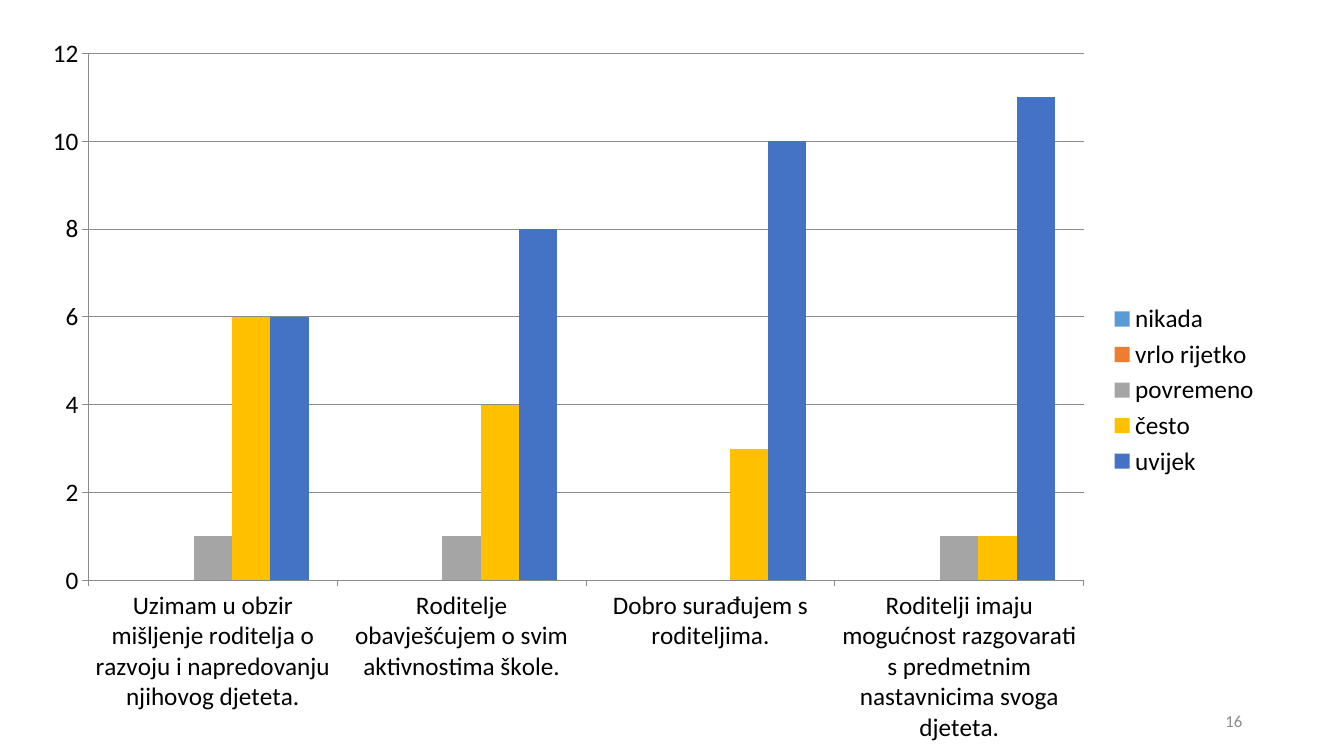
"""Build a slide with a column chart of teachers' answers about working with parents."""
from lxml import etree
from pptx import Presentation
from pptx.chart.data import CategoryChartData
from pptx.dml.color import RGBColor
from pptx.enum.chart import XL_CHART_TYPE as ChartType, XL_LEGEND_POSITION as LegendPosition
from pptx.enum.chart import XL_TICK_MARK as TickMark
from pptx.enum.text import MSO_ANCHOR as Anchor, PP_ALIGN as Align
from pptx.oxml.ns import qn
from pptx.util import Inches, Pt


def paint(color_format, hex_color):
    color_format.rgb = RGBColor.from_string(hex_color)


statements = [
    "Uzimam u obzir mišljenje roditelja o razvoju i napredovanju njihovog djeteta.",
    "Roditelje obavješćujem o svim aktivnostima škole.",
    "Dobro surađujem s roditeljima.",
    "Roditelji imaju mogućnost razgovarati s predmetnim nastavnicima svoga djeteta.",
]
answers = [
    ("nikada", (None, None, None, None), "5B9BD5"),
    ("vrlo rijetko", (None, None, None, None), "ED7D31"),
    ("povremeno", (1, 1, None, 1), "A5A5A5"),
    ("često", (6, 4, 3, 1), "FFC000"),
    ("uvijek", (6, 8, 10, 11), "4472C4"),
]

deck = Presentation()
deck.slide_width, deck.slide_height = Inches(13.33), Inches(7.5)
slide = deck.slides.add_slide(deck.slide_layouts[6])

survey = CategoryChartData()
survey.categories = statements
for answer, counts, _ in answers:
    survey.add_series(answer, counts)

chart = slide.shapes.add_chart(
    ChartType.COLUMN_CLUSTERED, Inches(0.26), Inches(0.24), Inches(12.34), Inches(7.26), survey
).chart
chart.has_title = False
chart.font.name = "Calibri"
chart.font.size = Pt(18)
paint(chart.font.color, "000000")
chart.has_legend = True
chart.legend.position = LegendPosition.RIGHT
chart.legend.include_in_layout = False

columns = chart.plots[0]
columns.gap_width = 150
columns.overlap = 0
columns.vary_by_categories = False
for series, (_, _, color) in zip(columns.series, answers):
    series.format.fill.solid()
    paint(series.format.fill.fore_color, color)

counts_axis = chart.value_axis
counts_axis.minimum_scale, counts_axis.maximum_scale, counts_axis.major_unit = 0, 12, 2
counts_axis.has_major_gridlines = True
for axis in (chart.category_axis, counts_axis):
    axis.major_tick_mark = TickMark.OUTSIDE
    axis.minor_tick_mark = TickMark.NONE
for ruled in (chart.category_axis, counts_axis, counts_axis.major_gridlines):
    ruled.format.line.width = Pt(0.75)
    paint(ruled.format.line.color, "8B8B8B")

plot_area = columns._element.getparent()
for old_layout in plot_area.findall(qn("c:layout")):
    plot_area.remove(old_layout)
layout = etree.Element(qn("c:layout"))
plot_area.insert(0, layout)
manual = etree.SubElement(layout, qn("c:manualLayout"))
for tag, value in [("layoutTarget", "inner"), ("xMode", "edge"), ("yMode", "edge"),
                   ("x", "0.05"), ("y", "0.04"), ("w", "0.8"), ("h", "0.72")]:
    etree.SubElement(manual, qn(f"c:{tag}")).set("val", value)

page_number = slide.shapes.add_textbox(Inches(9.42), Inches(6.95), Inches(3), Inches(0.4)).text_frame
page_number.word_wrap = True
page_number.vertical_anchor = Anchor.MIDDLE
number = page_number.paragraphs[0]
number.text = "16"
number.alignment = Align.RIGHT
number.font.name = "Calibri"
number.font.size = Pt(12)
paint(number.font.color, "8C8C8C")

deck.save("out.pptx")
